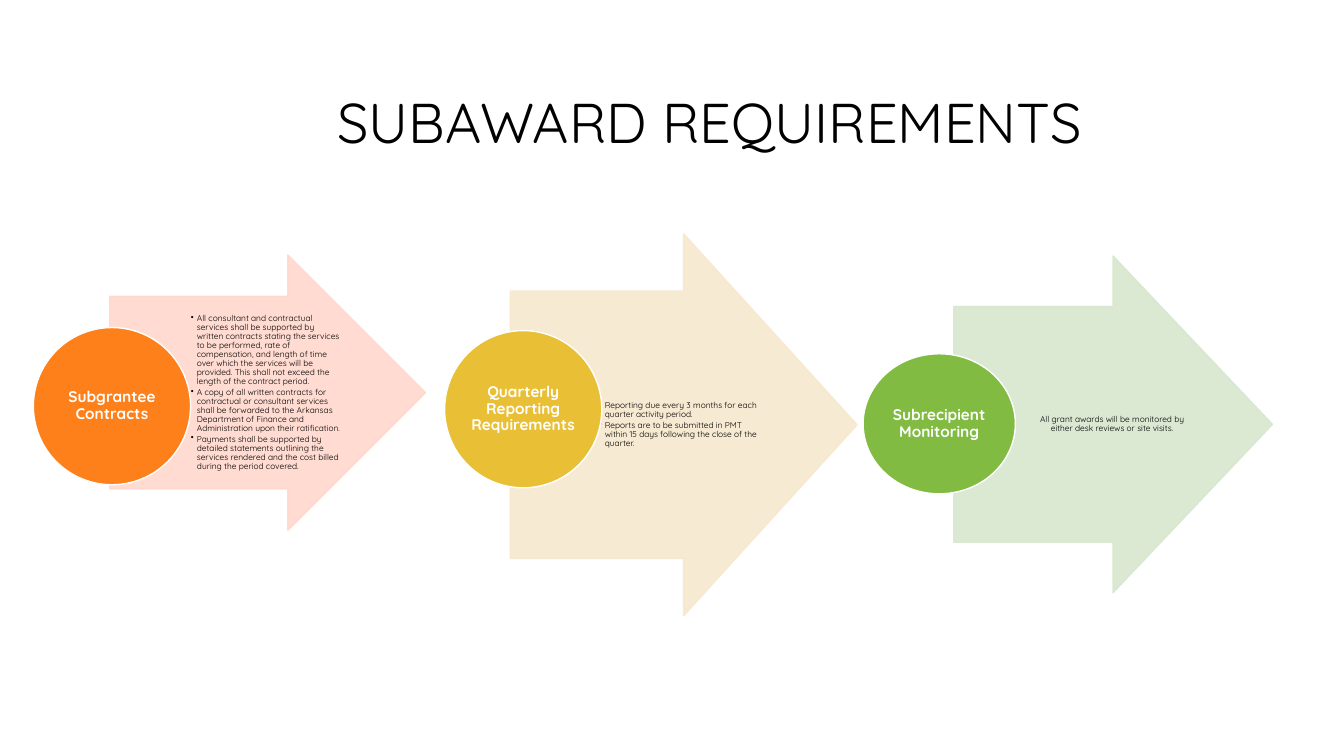
from lxml.etree import SubElement
from pptx import Presentation
from pptx.dml.color import RGBColor
from pptx.enum.shapes import MSO_SHAPE
from pptx.enum.text import MSO_ANCHOR, MSO_AUTO_SIZE, PP_ALIGN
from pptx.oxml.ns import qn
from pptx.util import Inches, Pt

FONT = "Quicksand"
WIDTH, HEIGHT = Inches(13.33), Inches(7.5)
COLORS = {
    "ink": "000000", "white": "FFFFFF",
    "orange": "FE801A", "peach": "FFD8CD",
    "gold": "E9BF35", "cream": "F7E8CE",
    "green": "81BB42", "mint": "D8E7CF",
}
STAGES = [
    {
        "label": "Subgrantee Contracts", "colors": ("orange", "peach"), "bulleted": True,
        "arrow": (8.18, 33.73, 23.48, 36.4), "circle": (2.48, 43.33, 11.7, 20.8),
        "details": [
            "All consultant and contractual services shall be supported by written contracts "
            "stating the services to be performed, rate of compensation, and length of time "
            "over which the services will be provided. This shall not exceed the length of "
            "the contract period.",
            "A copy of all written contracts for contractual or consultant services shall be "
            "forwarded to the Arkansas Department of Finance and Administration upon their "
            "ratification.",
            "Payments shall be supported by detailed statements outlining the services "
            "rendered and the cost billed during the period covered.",
        ],
    },
    {
        "label": "Quarterly Reporting Requirements", "colors": ("gold", "cream"), "bulleted": True,
        "arrow": (37.96, 30.93, 25.81, 50.53), "circle": (33.08, 43.73, 11.7, 20.8),
        "details": [
            "Reporting due every 3 months for each quarter activity period.",
            "Reports are to be submitted in PMT within 15 days following the close of the quarter.",
        ],
    },
    {
        "label": "Subrecipient Monitoring", "colors": ("green", "mint"), "bulleted": False,
        "arrow": (70.97, 33.87, 23.71, 44.53), "circle": (64.22, 46.8, 11.33, 18.53),
        "details": ["All grant awards will be monitored by either desk reviews or site visits."],
    },
]


def place(area):
    """Turn percentages of the slide into lengths."""
    return [round(share * side / 100) for share, side in zip(area, (WIDTH, HEIGHT) * 2)]


def inner(area, left, top, width, height):
    """Return the part of an area given by shares of its size."""
    x, y, w, h = area
    return x + left * w, y + top * h, width * w, height * h


def add_outline(slide, preset, area, fill, line, alpha=None):
    """Draw a filled preset shape, optionally see-through."""
    outline = slide.shapes.add_shape(preset, *place(area))
    outline.shadow.inherit = False
    outline.line.width = Pt(1)
    outline.fill.solid()
    for paint, name in ((outline.fill, fill), (outline.line.fill, line)):
        paint.solid()
        paint.fore_color.rgb = RGBColor.from_string(COLORS[name])
    if alpha:
        for color in outline.element.spPr.iter(qn("a:srgbClr")):
            SubElement(color, qn("a:alpha"), val=str(alpha * 1000))
    return outline


def add_bullet(paragraph):
    """Give a paragraph a hanging bullet."""
    properties = paragraph._p.get_or_add_pPr()
    properties.set("marL", str(Inches(0.06)))
    properties.set("indent", str(-Inches(0.06)))
    SubElement(properties, qn("a:buChar"), char="•")


def write_run(paragraph, words, size, color, bold=False):
    """Add a formatted run to a paragraph."""
    run = paragraph.add_run()
    run.text = words
    run.font.name, run.font.size, run.font.bold = FONT, Pt(size), bold
    run.font.color.rgb = RGBColor.from_string(COLORS[color])


def add_words(slide, area, lines, size, color, insets, bold=False, bulleted=False):
    """Add a vertically centred text box."""
    frame = slide.shapes.add_textbox(*place(area)).text_frame
    frame.word_wrap = True
    frame.vertical_anchor = MSO_ANCHOR.MIDDLE
    frame.margin_left, frame.margin_top, frame.margin_right, frame.margin_bottom = map(Inches, insets)
    for index, words in enumerate(lines):
        paragraph = frame.add_paragraph() if index else frame.paragraphs[0]
        paragraph.line_spacing = 0.9
        paragraph.space_after = Pt(1)
        paragraph.alignment = PP_ALIGN.LEFT if bulleted else PP_ALIGN.CENTER
        if bulleted:
            add_bullet(paragraph)
        write_run(paragraph, words, size, color, bold)


def add_title(slide, words):
    """Place and fill the title placeholder."""
    title = slide.shapes.title
    title.left, title.top, title.width, title.height = place((5.33, 9.2, 75.92, 14.8))
    frame = title.text_frame
    frame.auto_size = MSO_AUTO_SIZE.NONE
    frame.vertical_anchor = MSO_ANCHOR.MIDDLE
    heading = frame.paragraphs[0]
    heading.alignment = PP_ALIGN.RIGHT
    heading.line_spacing = 0.9
    write_run(heading, words, 40, "ink")


def add_stage(slide, stage):
    """Draw an arrow with its details and its labelled circle."""
    strong, pale = stage["colors"]
    arrow = add_outline(slide, MSO_SHAPE.RIGHT_ARROW, stage["arrow"], pale, pale, alpha=90)
    arrow.adjustments[0], arrow.adjustments[1] = 0.7, 0.5
    add_words(slide, inner(stage["arrow"], 0.25, 0.15, 0.49, 0.7), stage["details"],
              6, "ink", (0.02, 0, 0.01, 0), bulleted=stage["bulleted"])
    add_outline(slide, MSO_SHAPE.OVAL, stage["circle"], strong, "white")
    add_words(slide, inner(stage["circle"], 0.145, 0.145, 0.71, 0.71), [stage["label"]],
              11, "white", (0.01,) * 4, bold=True)


def main():
    """Build the slide and save it."""
    deck = Presentation()
    deck.slide_width, deck.slide_height = WIDTH, HEIGHT
    slide = deck.slides.add_slide(deck.slide_layouts[5])
    add_title(slide, "SUBAWARD REQUIREMENTS")
    for stage in STAGES:
        add_stage(slide, stage)
    deck.save("out.pptx")


if __name__ == "__main__":
    main()
